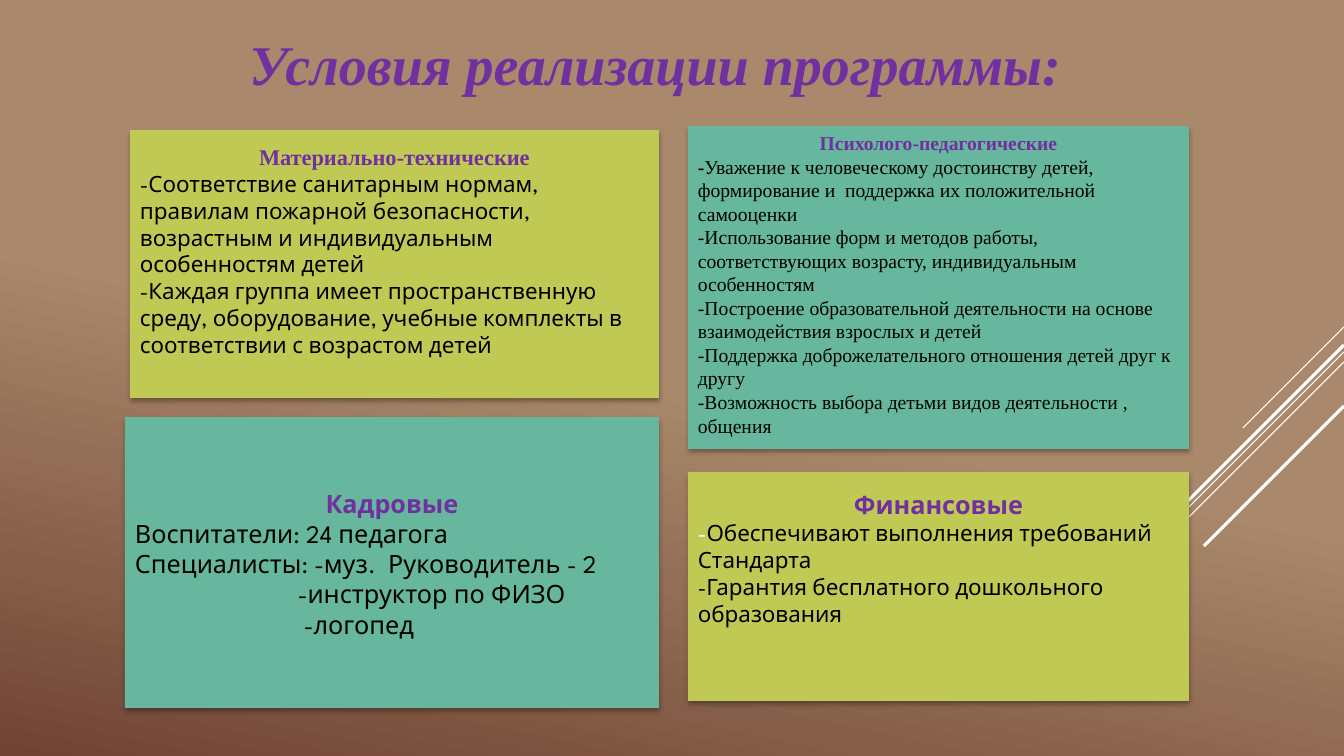
import pptx
import pptx.dml.color
import pptx.enum.shapes
import pptx.enum.text
import pptx.oxml
import pptx.oxml.ns
import pptx.util
from dataclasses import dataclass

RGBColor = pptx.dml.color.RGBColor
PP_ALIGN = pptx.enum.text.PP_ALIGN

PURPLE = RGBColor(0x70, 0x30, 0xA0)
OLIVE = RGBColor(0xC1, 0xC9, 0x55)
TEAL = RGBColor(0x67, 0xB7, 0x9E)
BLACK = RGBColor(0, 0, 0)
WHITE = RGBColor(0xFF, 0xFF, 0xFF)
SAND = RGBColor(0xA9, 0x88, 0x6B)
BROWN = RGBColor(0x70, 0x44, 0x34)

SERIF = "Times New Roman"
SANS = "League Spartan"
SLIDE_W, SLIDE_H = 1344, 756
LINE_PITCH = 1.2

SHADOW = (
    f'<a:effectLst {pptx.oxml.ns.nsdecls("a")}>'
    '<a:outerShdw blurRad="44450" dist="27940" dir="5400000" algn="ctr" rotWithShape="0">'
    '<a:srgbClr val="000000"><a:alpha val="32000"/></a:srgbClr>'
    '</a:outerShdw></a:effectLst>'
)
NO_EFFECTS = f'<a:effectLst {pptx.oxml.ns.nsdecls("a")}/>'


@dataclass
class Run:
    text: str
    color: RGBColor = BLACK
    bold: bool = False


@dataclass
class Para:
    runs: list[Run]
    indent: int = 0


@dataclass
class Card:
    x: int
    y: int
    w: int
    h: int
    fill: RGBColor
    top_inset: int
    heading: str
    heading_font: str
    body_font: str
    heading_size: int
    body_size: int
    body: list[Para]


@dataclass
class Ray:
    y: int
    run: int
    width: float


def px(n: int) -> int:
    return round(n * 914400 / 100.8)


def line(text: str, indent: int = 0) -> Para:
    return Para([Run(text)], indent)


RAYS = [
    Ray(327, 101, 0.75),
    Ray(352, 329, 0.75),
    Ray(362, 209, 0.75),
    Ray(345, 193, 2.25),
    Ray(406, 140, 2.25),
]

CARDS = [
    Card(130, 130, 529, 268, OLIVE, 13, "Материально-технические", SERIF, SANS, 16, 16, [
        line("-Соответствие санитарным нормам, правилам пожарной безопасности, "
             "возрастным и индивидуальным особенностям детей"),
        line("-Каждая группа имеет пространственную среду, оборудование, "
             "учебные комплекты в соответствии с возрастом детей"),
    ]),
    Card(125, 417, 534, 291, TEAL, 71, "Кадровые", SANS, SANS, 18, 18, [
        line("Воспитатели: 24 педагога"),
        line("Специалисты: -муз.  Руководитель - 2"),
        line("-инструктор по ФИЗО", 163),
        line("-логопед", 169),
    ]),
    Card(688, 126, 501, 323, TEAL, 5, "Психолого-педагогические", SERIF, SERIF, 14, 14, [
        Para([Run("-", bold=True),
              Run("Уважение к человеческому достоинству детей, формирование и  "
                  "поддержка их положительной самооценки")]),
        line("-Использование форм и методов работы, соответствующих возрасту, "
             "индивидуальным особенностям"),
        line("-Построение образовательной деятельности на основе "
             "взаимодействия взрослых и детей"),
        line("-Поддержка доброжелательного отношения детей друг к другу"),
        line("-Возможность выбора детьми видов деятельности , общения"),
    ]),
    Card(688, 472, 501, 229, OLIVE, 17, "Финансовые", SANS, SANS, 18, 16, [
        Para([Run("-", WHITE), Run("Обеспечивают выполнения требований Стандарта")]),
        line("-Гарантия бесплатного дошкольного образования"),
    ]),
]


def write_para(p, para: Para, font: str, size: int, align, italic: bool = False) -> None:
    p.alignment = align
    p.line_spacing = pptx.util.Pt(round(size * LINE_PITCH, 1))
    p.space_before = p.space_after = pptx.util.Pt(0)
    if para.indent:
        pPr = p._p.get_or_add_pPr()
        pPr.set("marL", str(px(para.indent)))
        pPr.set("indent", "0")
    for run in para.runs:
        r = p.add_run()
        r.text = run.text
        r.font.name = font
        r.font.size = pptx.util.Pt(size)
        r.font.bold = run.bold
        r.font.italic = italic
        r.font.color.rgb = run.color


def paint_background(slide) -> None:
    fill = slide.background.fill
    fill.gradient()
    fill.gradient_angle = 258
    for stop, color, position in zip(fill.gradient_stops, (SAND, BROWN), (0.51, 1)):
        stop.color.rgb = color
        stop.position = position


def add_title(slide) -> None:
    sp = slide.shapes.title
    sp.left, sp.top, sp.width, sp.height = px(239), px(24), px(841), px(77)
    tf = sp.text_frame
    tf.word_wrap = False
    tf.auto_size = pptx.enum.text.MSO_AUTO_SIZE.NONE
    tf.vertical_anchor = pptx.enum.text.MSO_ANCHOR.TOP
    title = Para([Run("Условия реализации программы:", PURPLE, True)])
    write_para(tf.paragraphs[0], title, SERIF, 40, PP_ALIGN.LEFT, italic=True)


def add_ray(slide, ray: Ray) -> None:
    cxn = slide.shapes.add_connector(
        pptx.enum.shapes.MSO_CONNECTOR.STRAIGHT,
        px(SLIDE_W), px(ray.y), px(SLIDE_W - ray.run), px(ray.y + ray.run))
    cxn.line.color.rgb = WHITE
    cxn.line.width = pptx.util.Pt(ray.width)
    cxn._element.spPr.append(pptx.oxml.parse_xml(NO_EFFECTS))


def add_card(slide, card: Card) -> None:
    sp = slide.shapes.add_shape(
        pptx.enum.shapes.MSO_SHAPE.RECTANGLE,
        px(card.x), px(card.y), px(card.w), px(card.h))
    sp.fill.solid()
    sp.fill.fore_color.rgb = card.fill
    sp.line.fill.background()
    sp._element.spPr.append(pptx.oxml.parse_xml(SHADOW))
    tf = sp.text_frame
    tf.word_wrap = True
    tf.vertical_anchor = pptx.enum.text.MSO_ANCHOR.TOP
    tf.margin_top = px(card.top_inset)
    heading = Para([Run(card.heading, PURPLE, True)])
    write_para(tf.paragraphs[0], heading, card.heading_font, card.heading_size, PP_ALIGN.CENTER)
    for para in card.body:
        write_para(tf.add_paragraph(), para, card.body_font, card.body_size, PP_ALIGN.LEFT)


def main() -> None:
    prs = pptx.Presentation()
    prs.slide_width, prs.slide_height = px(SLIDE_W), px(SLIDE_H)
    slide = prs.slides.add_slide(prs.slide_layouts[5])
    paint_background(slide)
    add_title(slide)
    for ray in RAYS:
        add_ray(slide, ray)
    for card in CARDS:
        add_card(slide, card)
    prs.save("out.pptx")


if __name__ == "__main__":
    main()
